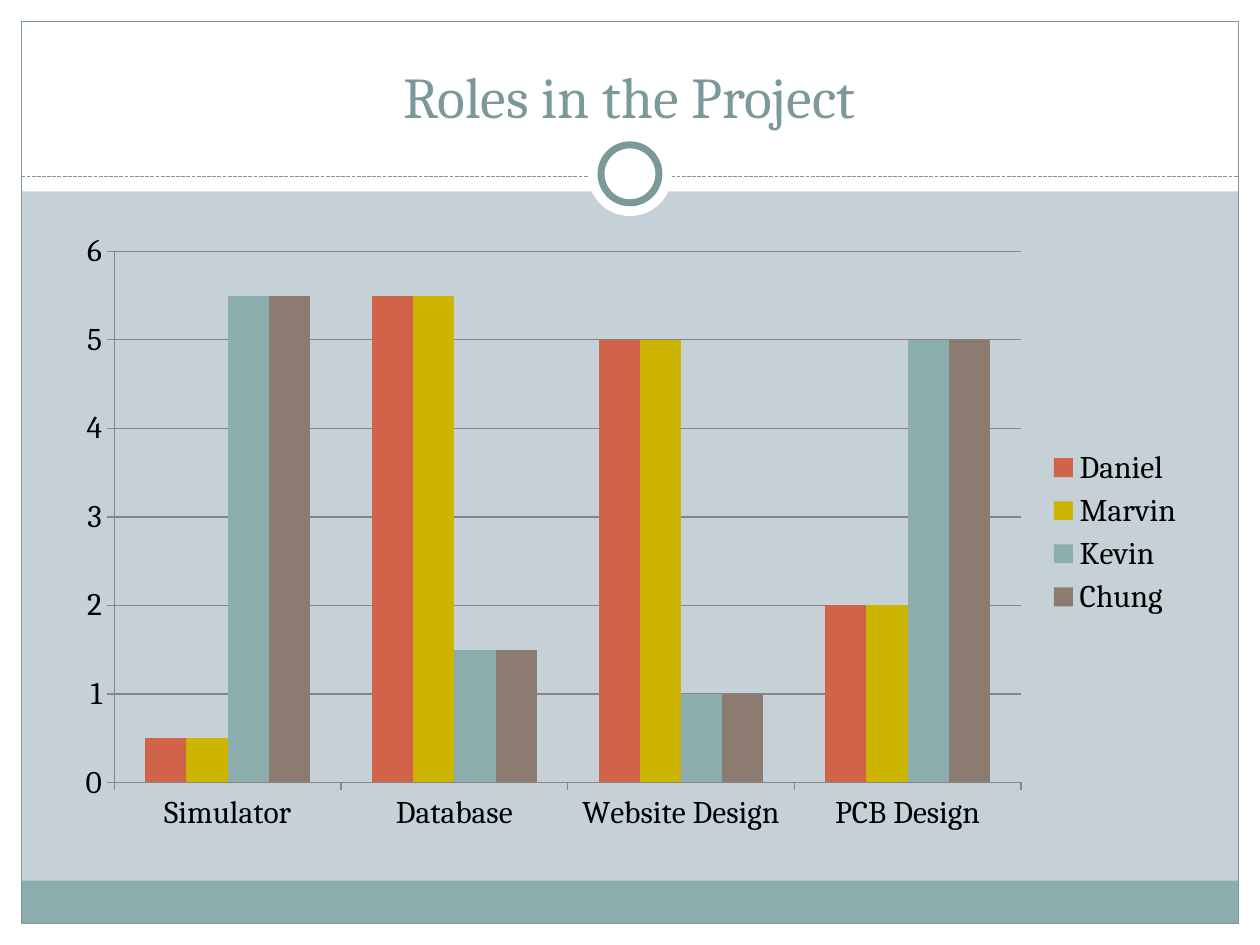
from dataclasses import dataclass

from lxml import etree
from pptx import Presentation
from pptx import util as u
from pptx.chart.data import CategoryChartData
from pptx.dml.color import RGBColor
from pptx.enum import chart as ch, dml, shapes, text
from pptx.oxml import ns

WIDTH, HEIGHT = 10, 7.5
MARGIN = 0.17
HEADER_HEIGHT = 1.52
DIVIDER_TOP = 1.4
RING_CENTRE_TOP = 1.38


@dataclass(frozen=True)
class Theme:
    font: str = "Cambria"
    title_size: float = 33
    chart_size: float = 18
    background: str = "C5D1D7"
    paper: str = "FFFFFF"
    accent: str = "7C999A"
    footer: str = "8CADAE"
    ink: str = "000000"
    axis: str = "868686"
    series: tuple = ("D16349", "CCB400", "8CADAE", "8C7B70")


THEME = Theme()

CATEGORIES = ("Simulator", "Database", "Website Design", "PCB Design")
SIMULATOR_AND_PCB_HEAVY = (5.5, 1.5, 1, 5)
DATABASE_AND_WEB_HEAVY = (0.5, 5.5, 5, 2)
ROLES = {
    "Daniel": DATABASE_AND_WEB_HEAVY,
    "Marvin": DATABASE_AND_WEB_HEAVY,
    "Kevin": SIMULATOR_AND_PCB_HEAVY,
    "Chung": SIMULATOR_AND_PCB_HEAVY,
}


def inches(*lengths):
    return [u.Inches(length) for length in lengths]


def colour(value):
    return RGBColor.from_string(value)


def style_font(font, size, value):
    font.name = THEME.font
    font.size = u.Pt(size)
    font.color.rgb = colour(value)


def style_line(line, value, width=0.75):
    line.color.rgb = colour(value)
    line.width = u.Pt(width)


def add_panel(slide, box, fill=None, line_width=None,
              kind=shapes.MSO_SHAPE.RECTANGLE):
    shape = slide.shapes.add_shape(kind, *inches(*box))
    shape.shadow.inherit = False
    if fill:
        shape.fill.solid()
        shape.fill.fore_color.rgb = colour(fill)
    else:
        shape.fill.background()
    if line_width:
        style_line(shape.line, THEME.accent, line_width)
    else:
        shape.line.fill.background()


def add_disc(slide, diameter, line_width=None):
    """Add a white disc centred on the ring's place on the divider."""
    left = (WIDTH - diameter) / 2
    top = RING_CENTRE_TOP - diameter / 2
    add_panel(slide, (left, top, diameter, diameter), THEME.paper,
              line_width, shapes.MSO_SHAPE.OVAL)


def add_divider(slide):
    connector = slide.shapes.add_connector(
        shapes.MSO_CONNECTOR.STRAIGHT,
        *inches(MARGIN, DIVIDER_TOP, WIDTH - MARGIN, DIVIDER_TOP))
    style_line(connector.line, THEME.accent)
    connector.line.dash_style = dml.MSO_LINE.SQUARE_DOT
    etree.SubElement(connector.element.spPr, ns.qn("a:effectLst"))


def add_frame(slide):
    inner_width, inner_height = WIDTH - 2 * MARGIN, HEIGHT - 2 * MARGIN
    borders = (
        (0, HEIGHT - MARGIN, WIDTH, MARGIN),
        (0, 0, WIDTH, HEADER_HEIGHT),
        (0, 0, MARGIN, HEIGHT),
        (WIDTH - MARGIN, 0, MARGIN, HEIGHT),
    )
    for box in borders:
        add_panel(slide, box, THEME.paper)
    footer_height = 2 * MARGIN
    add_panel(slide, (MARGIN, HEIGHT - MARGIN - footer_height,
                      inner_width, footer_height), THEME.footer)
    add_panel(slide, (MARGIN, MARGIN, inner_width, inner_height),
              line_width=0.75)
    add_divider(slide)
    add_disc(slide, 0.67)
    add_disc(slide, 0.46, line_width=4)


def set_title(slide, wording):
    """Fill the title placeholder and bring it in front of the frame."""
    title = slide.shapes.title
    title.left, title.top, title.width, title.height = inches(
        0.33, 0.25, 9.33, 0.83)
    frame = title.text_frame
    frame.text = wording
    frame.word_wrap = True
    frame.vertical_anchor = text.MSO_ANCHOR.BOTTOM
    paragraph = frame.paragraphs[0]
    paragraph.alignment = text.PP_ALIGN.CENTER
    style_font(paragraph.runs[0].font, THEME.title_size, THEME.accent)
    slide.shapes.element.append(title.element)


def add_roles_chart(slide):
    data = CategoryChartData()
    data.categories = CATEGORIES
    for name, values in ROLES.items():
        data.add_series(name, values)
    chart = slide.shapes.add_chart(
        ch.XL_CHART_TYPE.COLUMN_CLUSTERED,
        *inches(0.5, 1.75, 9, 4.95), data).chart
    style_font(chart.font, THEME.chart_size, THEME.ink)
    chart.has_title = False
    chart.has_legend = True
    chart.legend.position = ch.XL_LEGEND_POSITION.RIGHT
    chart.legend.include_in_layout = False

    for axis in (chart.category_axis, chart.value_axis):
        axis.major_tick_mark = ch.XL_TICK_MARK.OUTSIDE
        axis.minor_tick_mark = ch.XL_TICK_MARK.NONE
        style_line(axis.format.line, THEME.axis)
    value_axis = chart.value_axis
    value_axis.minimum_scale, value_axis.maximum_scale = 0, 6
    value_axis.major_unit = 1
    value_axis.has_major_gridlines = True
    style_line(value_axis.major_gridlines.format.line, THEME.axis)

    plot = chart.plots[0]
    plot.vary_by_categories = False
    plot.gap_width, plot.overlap = 150, 0
    for series, fill in zip(plot.series, THEME.series):
        series.format.fill.solid()
        series.format.fill.fore_color.rgb = colour(fill)


def main():
    presentation = Presentation()
    presentation.slide_width, presentation.slide_height = inches(WIDTH, HEIGHT)
    title_only = presentation.slide_layouts.get_by_name("Title Only")
    slide = presentation.slides.add_slide(title_only)
    slide.background.fill.solid()
    slide.background.fill.fore_color.rgb = colour(THEME.background)
    add_frame(slide)
    set_title(slide, "Roles in the Project")
    add_roles_chart(slide)
    presentation.save("out.pptx")


if __name__ == "__main__":
    main()
